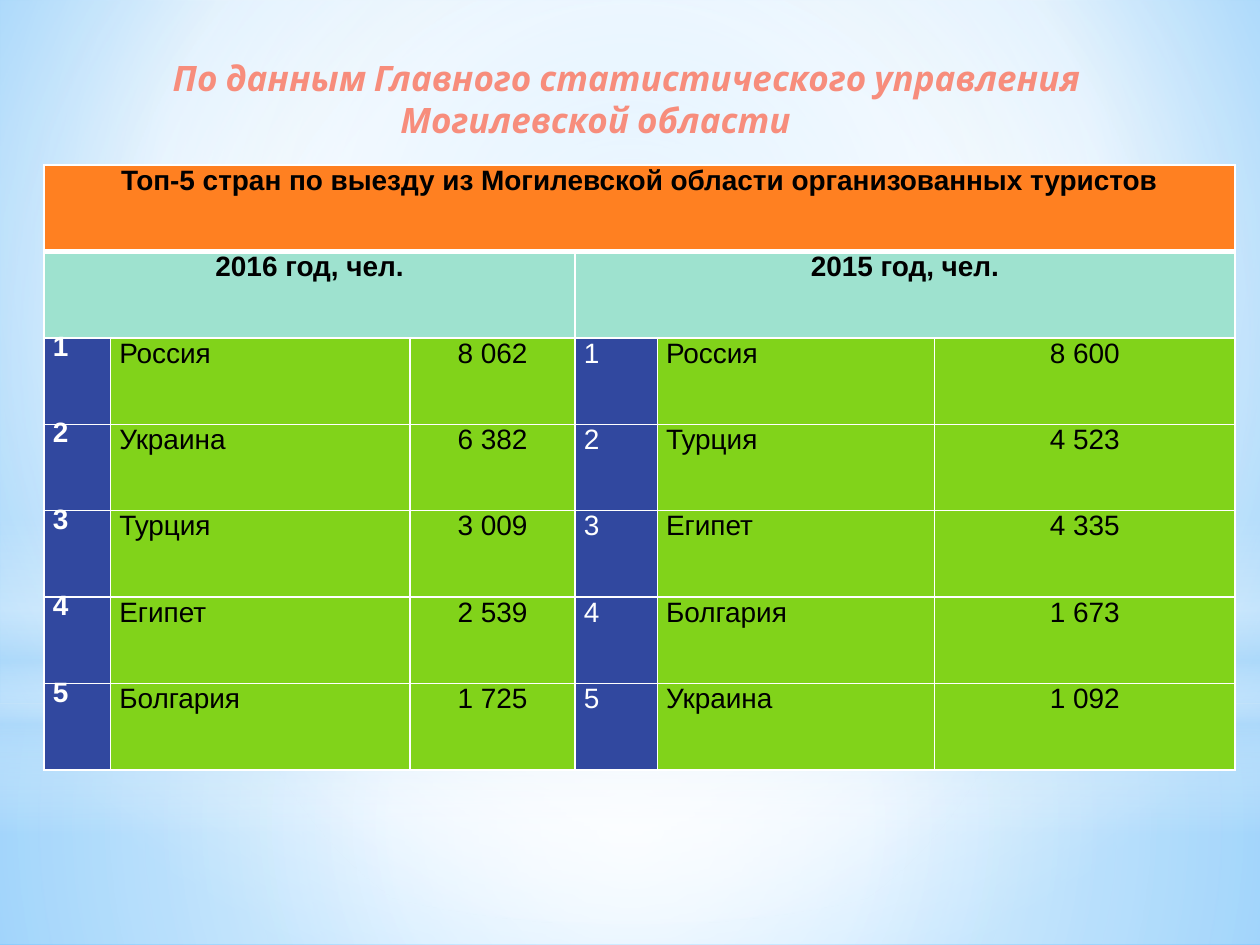
"""Build a slide with the top five countries for organised trips abroad."""
from lxml.etree import SubElement
from pptx import Presentation
from pptx.dml.color import RGBColor
from pptx.enum.shapes import MSO_SHAPE as Shape
from pptx.enum.text import PP_ALIGN as Align
from pptx.oxml.ns import qn
from pptx.util import Pt

COLORS = {
    "white": "FFFFFF", "black": "000000", "sky": "B4DCFA", "light": "9ED5FF",
    "deep": "5BB9FF", "coral": "F78D7C", "navy": "17204F", "orange": "FF8021",
    "mint": "9EE2CF", "blue": "31489F", "green": "81D31A",
}
TITLE = "По данным Главного статистического управления Могилевской области"
HEADING = "Топ-5 стран по выезду из Могилевской области организованных туристов"
YEARS = ["2016 год, чел.", "2015 год, чел."]
COUNTRIES = [
    [("Россия", "8 062"), ("Россия", "8 600")],
    [("Украина", "6 382"), ("Турция", "4 523")],
    [("Турция", "3 009"), ("Египет", "4 335")],
    [("Египет", "2 539"), ("Болгария", "1 673")],
    [("Болгария", "1 725"), ("Украина", "1 092")],
]
COLUMNS = [38, 171, 94.5, 47, 158.5, 171.5]
ROW_HEIGHT = 49.4
CENTER = (50, 50, 50, 50)
BACKGROUND = ([(0, "light", 100), (60, "white", 100), (100, "deep", 100)], (20, 10, 20, 60))
GLOWS = [
    (Shape.RECTANGLE, (0, 402, 720, 138),
     [(0, "white", 91), (37, "white", 76), (100, "sky", 79)], CENTER),
    (Shape.RECTANGLE, (0, 0, 720, 402),
     [(0, "white", 89), (48, "white", 62), (100, "sky", 79)], CENTER),
    (Shape.RECTANGLE, (0, 296.5, 720, 180),
     [(0, "white", 0), (29, "white", 30), (45, "sky", 40), (55, "white", 26),
      (65, "sky", 60), (100, "white", 0)], None),
    (Shape.OVAL, (0, 126, 720, 402), [(0, "white", 100), (56, "white", 0)], CENTER),
]


def add(parent, tag, **values):
    return SubElement(parent, qn(tag), {key: str(value) for key, value in values.items()})


def apply_gradient(properties, stops, focus):
    """Swap the solid fill for a circular gradient, or a vertical one without focus."""
    solid = properties.find(qn("a:solidFill"))
    gradient = add(properties, "a:gradFill", rotWithShape=1)
    properties.replace(solid, gradient)
    stop_list = add(gradient, "a:gsLst")
    for position, color, opacity in stops:
        stop = add(stop_list, "a:gs", pos=position * 1000)
        add(add(stop, "a:srgbClr", val=COLORS[color]), "a:alpha", val=opacity * 1000)
    if focus:
        circle = add(gradient, "a:path", path="circle")
        sides = {side: value * 1000 for side, value in zip("ltrb", focus)}
        add(circle, "a:fillToRect", **sides)
    else:
        add(gradient, "a:lin", ang=90 * 60000, scaled=0)


def write(para, text, color, **format_values):
    span = para.add_run()
    span.text = text
    span.font.color.rgb = RGBColor.from_string(COLORS[color])
    for name, value in format_values.items():
        setattr(span.font, name, value)
    return span


def add_line(parent, tag, color, width):
    line = add(parent, tag, w=Pt(width))
    add(add(line, "a:solidFill"), "a:srgbClr", val=COLORS[color])
    return line


def fill_cell(cell, text, fill, color="black", bold=False, align=Align.LEFT,
              spacing=None, bottom=1):
    margins = {"margin_left": 5, "margin_right": 5, "margin_top": 0, "margin_bottom": 0}
    for name, value in margins.items():
        setattr(cell, name, Pt(value))
    para = cell.text_frame.paragraphs[0]
    para.alignment = align
    para.line_spacing = spacing
    if text:
        write(para, text, color, size=Pt(16), name="Arial", bold=bold)
    properties = cell._tc.get_or_add_tcPr()
    for side in "LRTB":
        add_line(properties, f"a:ln{side}", "white", bottom if side == "B" else 1)
    cell.fill.solid()
    cell.fill.fore_color.rgb = RGBColor.from_string(COLORS[fill])


def add_background(page):
    page.background.fill.solid()
    apply_gradient(page._element.find(".//" + qn("p:bgPr")), *BACKGROUND)
    for kind, place, stops, focus in GLOWS:
        glow = page.shapes.add_shape(kind, *map(Pt, place))
        glow.shadow.inherit = False
        glow.line.fill.background()
        glow.fill.solid()
        apply_gradient(glow._element.spPr, stops, focus)


def add_title(page):
    box = page.shapes.add_textbox(Pt(5.8), Pt(28.8), Pt(669), Pt(72.7))
    box.text_frame.word_wrap = True
    para = box.text_frame.paragraphs[0]
    para.alignment = Align.CENTER
    para._p.get_or_add_pPr().set("indent", str(Pt(35.4)))
    span = write(para, TITLE, "coral", size=Pt(20), name="Karla", bold=True, italic=True)
    properties = span.font._element
    properties.insert(0, add_line(properties, "a:ln", "navy", 1))


def add_ranking(page):
    row_count = len(COUNTRIES) + 2
    frame = page.shapes.add_table(row_count, len(COLUMNS), Pt(25.2), Pt(94.3),
                                  Pt(sum(COLUMNS)), Pt(ROW_HEIGHT * row_count))
    table = frame.table
    table.first_row = table.horz_banding = False
    for column, width in zip(table.columns, COLUMNS):
        column.width = Pt(width)
    for row in table.rows:
        row.height = Pt(ROW_HEIGHT)

    header = {"bold": True, "align": Align.CENTER}
    table.cell(0, 0).merge(table.cell(0, 5))
    for index in range(len(COLUMNS)):
        fill_cell(table.cell(0, index), "" if index else HEADING, "orange", bottom=3, **header)
        year, offset = divmod(index, 3)
        if not offset:
            table.cell(1, index).merge(table.cell(1, index + 2))
        fill_cell(table.cell(1, index), "" if offset else YEARS[year], "mint", **header)

    for rank, entries in enumerate(COUNTRIES, 1):
        for half, (country, people) in enumerate(entries):
            number, name, count = (table.cell(rank + 1, half * 3 + i) for i in range(3))
            first = half == 0
            fill_cell(number, str(rank), "blue", "white", bold=first,
                      spacing=Pt(14) if first else None)
            fill_cell(name, country, "green")
            fill_cell(count, people, "green", align=Align.CENTER)


def main():
    deck = Presentation()
    deck.slide_width, deck.slide_height = Pt(720), Pt(540)
    page = deck.slides.add_slide(deck.slide_layouts[6])
    add_background(page)
    add_title(page)
    add_ranking(page)
    deck.save("out.pptx")


if __name__ == "__main__":
    main()
